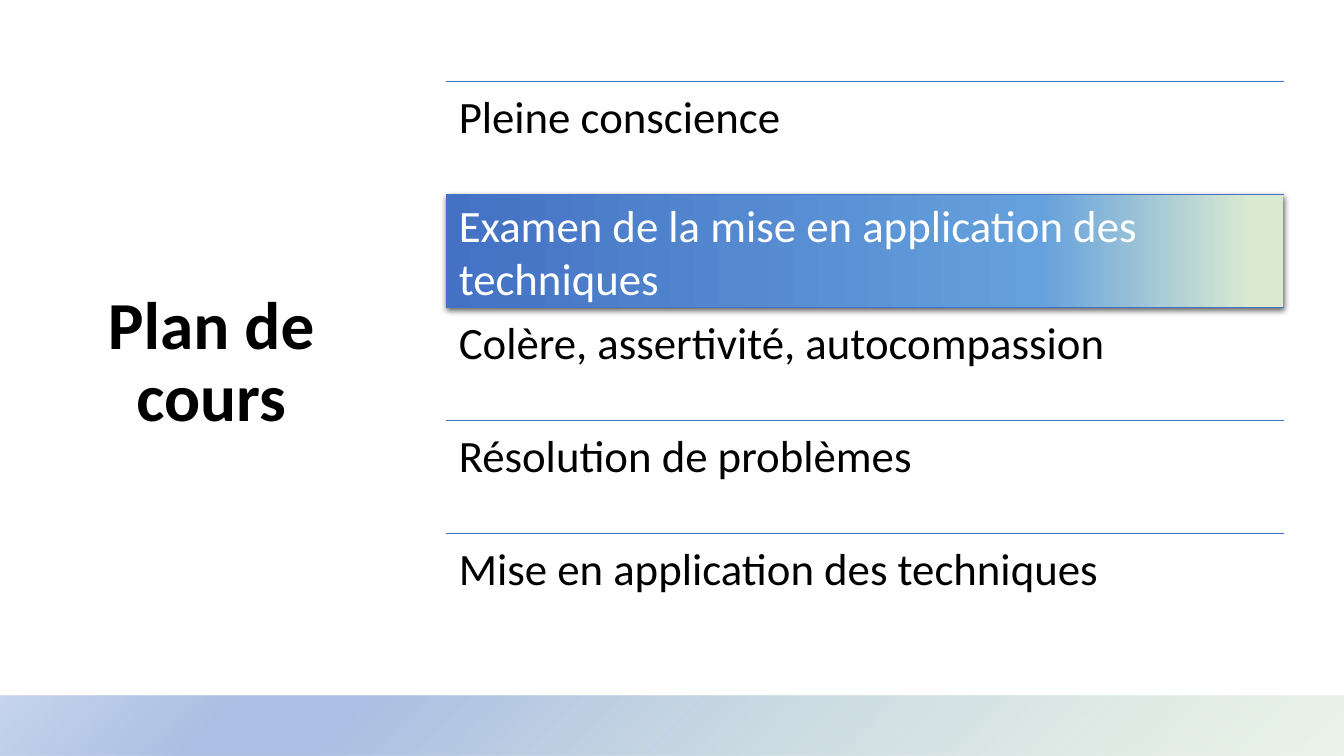
"""Build the course outline slide with its second topic highlighted."""
import pptx
import pptx.dml.color
import pptx.enum.shapes
import pptx.enum.text
import pptx.oxml
import pptx.oxml.ns
import pptx.util
from dataclasses import dataclass

TITLE = "Plan de cours"
TOPICS = [
    ["Pleine conscience"],
    ["Examen de la mise en application des", "techniques"],
    ["Colère, assertivité, autocompassion"],
    ["Résolution de problèmes"],
    ["Mise en application des techniques"],
]
CURRENT = 1

WIDTH, HEIGHT = 13.33, 7.5
LIST_LEFT, LIST_TOP, LIST_WIDTH, ROW = 4.42, 0.81, 8.31, 1.12
TITLE_FRAME = (0.84, 1.78, 2.51, 3.66)
BAND_FRAME = (0, HEIGHT * 0.92, WIDTH, HEIGHT * 0.08)
INSET = 0.13


@dataclass(frozen=True)
class Theme:
    """Colours, font and sizes of the slide."""
    font: str = "Calibri"
    title_size: int = 48
    topic_size: int = 32
    ink: str = "000000"
    highlight_ink: str = "FFFFFF"
    rule: str = "4472C4"
    highlight: tuple = ((0, "4471C4", 100), (71, "65A1DC", 100), (96, "DAEAD1", 100))
    band: tuple = ((0, "D6E8D1", 47), (74, "ABC0E4", 100),
                   (83, "ABC0E4", 100), (100, "C7D5ED", 100))


THEME = Theme()
LINEAR = '<a:lin ang="0" scaled="0"/>'
CORNER = '<a:path path="circle"><a:fillToRect l="100000" t="100000"/></a:path>'
SHADOW = ('<a:outerShdw {ns} blurRad="57150" dist="19050" dir="5400000" algn="ctr" '
          'rotWithShape="0"><a:srgbClr val="000000"><a:alpha val="63000"/>'
          '</a:srgbClr></a:outerShdw>')
NS = pptx.oxml.ns.nsdecls("a")


def inches(frame):
    return [pptx.util.Inches(length) for length in frame]


def colour(code):
    return pptx.dml.color.RGBColor.from_string(code)


def add_gradient_box(slide, frame, stops, direction):
    box = slide.shapes.add_shape(
        pptx.enum.shapes.MSO_SHAPE.RECTANGLE, *inches(frame))
    box.shadow.inherit = False
    box.line.fill.background()
    box.fill.background()
    marks = "".join(
        f'<a:gs pos="{place * 1000}"><a:srgbClr val="{code}">'
        f'<a:alpha val="{alpha * 1000}"/></a:srgbClr></a:gs>'
        for place, code, alpha in stops)
    gradient = pptx.oxml.parse_xml(
        f'<a:gradFill {NS} rotWithShape="1"><a:gsLst>{marks}</a:gsLst>'
        f'{direction}</a:gradFill>')
    properties = box.element.spPr
    properties.replace(properties.find(pptx.oxml.ns.qn("a:noFill")), gradient)
    return box


def add_rule(slide, top):
    rule = slide.shapes.add_connector(
        pptx.enum.shapes.MSO_CONNECTOR.STRAIGHT,
        *inches((LIST_LEFT, top, LIST_LEFT + LIST_WIDTH, top)))
    rule.line.color.rgb = colour(THEME.rule)
    rule.line.width = pptx.util.Pt(1)
    rule.element.spPr.append(pptx.oxml.parse_xml(f"<a:effectLst {NS}/>"))


def write(frame, lines, size, ink, bold, align, anchor, spacing):
    frame.word_wrap = True
    frame.auto_size = pptx.enum.text.MSO_AUTO_SIZE.NONE
    frame.vertical_anchor = anchor
    for number, line in enumerate(lines):
        para = frame.add_paragraph() if number else frame.paragraphs[0]
        para.alignment = align
        para.line_spacing = spacing
        span = para.add_run()
        span.text = line
        span.font.name = THEME.font
        span.font.size = pptx.util.Pt(size)
        span.font.bold = bold
        span.font.color.rgb = colour(ink)


def add_topic(slide, lines, top, current):
    box = slide.shapes.add_textbox(*inches((LIST_LEFT, top, LIST_WIDTH, ROW)))
    frame = box.text_frame
    frame.margin_left = frame.margin_right = pptx.util.Inches(INSET)
    frame.margin_top = frame.margin_bottom = pptx.util.Inches(INSET)
    anchors = pptx.enum.text.MSO_ANCHOR
    write(frame, lines, THEME.topic_size,
          THEME.highlight_ink if current else THEME.ink, False,
          pptx.enum.text.PP_ALIGN.LEFT,
          anchors.MIDDLE if current else anchors.TOP,
          1.0 if current else 0.9)


def main():
    deck = pptx.Presentation()
    deck.slide_width, deck.slide_height = inches((WIDTH, HEIGHT))
    slide = deck.slides.add_slide(deck.slide_layouts.get_by_name("Title Only"))

    add_gradient_box(slide, BAND_FRAME, THEME.band, CORNER)
    highlight = add_gradient_box(
        slide, (LIST_LEFT, LIST_TOP + CURRENT * ROW, LIST_WIDTH, ROW),
        THEME.highlight, LINEAR)
    effects = highlight.element.spPr.find(pptx.oxml.ns.qn("a:effectLst"))
    effects.append(pptx.oxml.parse_xml(SHADOW.format(ns=NS)))

    title = slide.shapes.title
    title.left, title.top, title.width, title.height = inches(TITLE_FRAME)
    write(title.text_frame, [TITLE], THEME.title_size, THEME.ink, True,
          pptx.enum.text.PP_ALIGN.CENTER, pptx.enum.text.MSO_ANCHOR.MIDDLE, 0.9)

    for row, lines in enumerate(TOPICS):
        top = LIST_TOP + row * ROW
        add_rule(slide, top)
        add_topic(slide, lines, top, row == CURRENT)

    deck.save("out.pptx")


if __name__ == "__main__":
    main()
